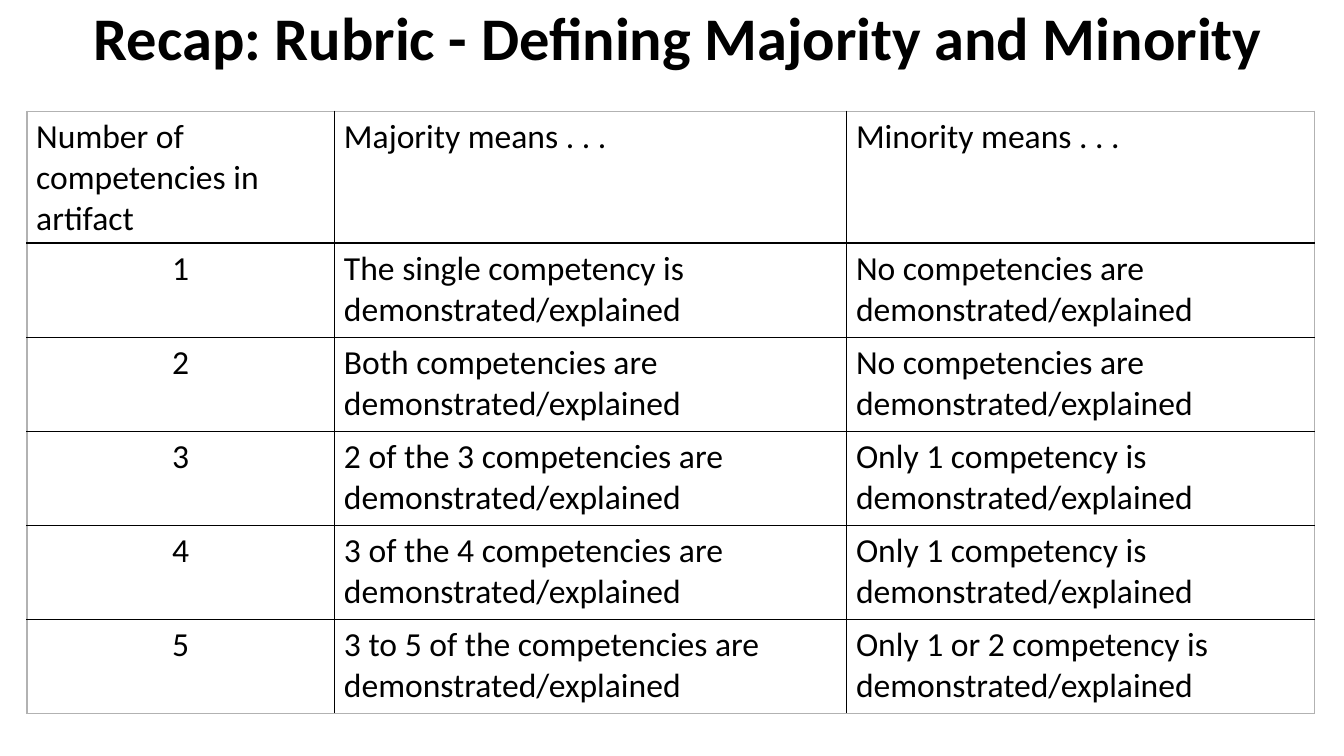
from lxml import etree
from pptx import Presentation
from pptx.dml.color import RGBColor
from pptx.enum.text import MSO_ANCHOR as ANCHOR, PP_ALIGN as ALIGN
from pptx.oxml.ns import qn
from pptx.util import Inches, Pt

COLORS = {"text": "000000", "inner": "000000", "outer": "B2B2B2"}
FONT = "Calibri"
COLUMNS = [2.29, 3.81, 3.48]
ROWS = [0.68] + [0.7] * 5  # the header row grows to fit its three lines
DONE = "demonstrated/explained"
CELLS = [
    ("Number of competencies in artifact", "Majority means . . .", "Minority means . . ."),
    ("1", f"The single competency is {DONE}", f"No competencies are {DONE}"),
    ("2", f"Both competencies are {DONE}", f"No competencies are {DONE}"),
    ("3", f"2 of the 3 competencies are {DONE}", f"Only 1 competency is {DONE}"),
    ("4", f"3 of the 4 competencies are {DONE}", f"Only 1 competency is {DONE}"),
    ("5", f"3 to 5 of the competencies are {DONE}", f"Only 1 or 2 competency is {DONE}"),
]
CELL_FORMAT = {
    "margin_left": Inches(0.07), "margin_right": Inches(0.07),
    "margin_top": Inches(0.04), "margin_bottom": Inches(0.04),
    "vertical_anchor": ANCHOR.TOP,
}


def write(p, text, size, bold=False):
    r = p.add_run()
    r.text = text
    for name, value in {"name": FONT, "size": Pt(size), "bold": bold}.items():
        setattr(r.font, name, value)
    r.font.color.rgb = RGBColor.from_string(COLORS["text"])


def add_borders(cell, outer_sides):
    """Draw a 1 pt line on all four sides; call before setting the fill."""
    tcPr = cell._tc.get_or_add_tcPr()
    for side, is_outer in outer_sides.items():
        ln = etree.SubElement(tcPr, qn(f"a:{side}"), w=str(Pt(1)))
        fill = etree.SubElement(ln, qn("a:solidFill"))
        color = COLORS["outer" if is_outer else "inner"]
        etree.SubElement(fill, qn("a:srgbClr"), val=color)


prs = Presentation()
prs.slide_width = Inches(10)
prs.slide_height = prs.slide_width * 9 // 16
s = prs.slides.add_slide(prs.slide_layouts[6])

# Title
sp = s.shapes.add_textbox(Inches(0.6), Inches(0.01), Inches(9.17), Inches(1.09))
tf = sp.text_frame
for name, value in {"word_wrap": True, "vertical_anchor": ANCHOR.TOP}.items():
    setattr(tf, name, value)
p = tf.paragraphs[0]
p.line_spacing = 0.9
write(p, "Recap: Rubric - Defining Majority and Minority", 32.4, bold=True)

# Rubric table
table = s.shapes.add_table(
    len(ROWS), len(COLUMNS), Inches(0.2), Inches(0.83),
    Inches(sum(COLUMNS)), Inches(sum(ROWS)),
).table
table.first_row = table.horz_banding = False
for column, width in zip(table.columns, COLUMNS):
    column.width = Inches(width)
for i, (row, height) in enumerate(zip(table.rows, ROWS)):
    row.height = Inches(height)
    for j, cell in enumerate(row.cells):
        for name, value in CELL_FORMAT.items():
            setattr(cell, name, value)
        add_borders(cell, {
            "lnL": j == 0, "lnR": j == len(COLUMNS) - 1,
            "lnT": i == 0, "lnB": i == len(ROWS) - 1,
        })
        cell.fill.background()
        p = cell.text_frame.paragraphs[0]
        p.alignment = ALIGN.CENTER if i > 0 and j == 0 else ALIGN.LEFT
        write(p, CELLS[i][j], 18)

prs.save("out.pptx")
